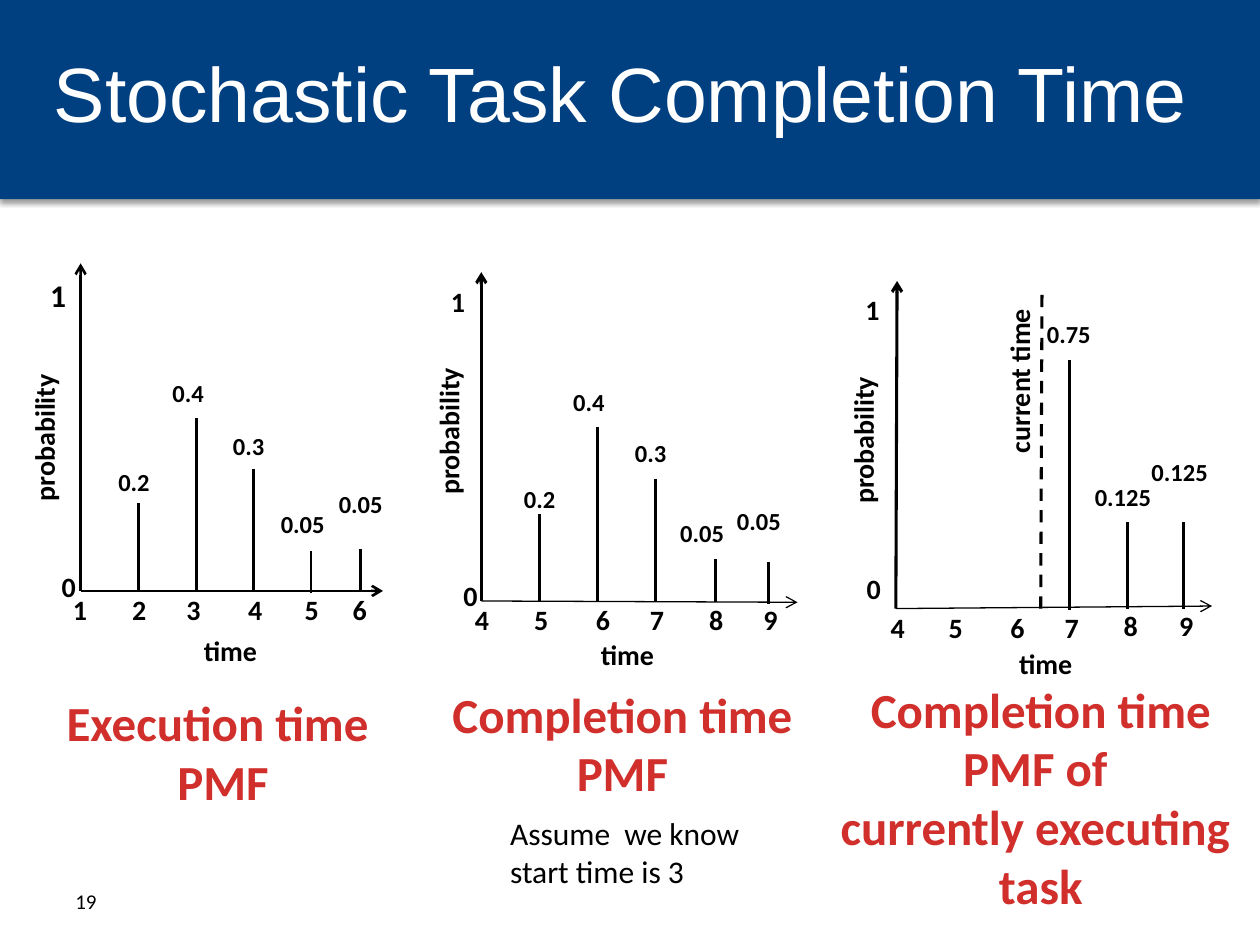
import dataclasses
import typing

import pptx
import pptx.dml.color
import pptx.enum.dml
import pptx.enum.shapes
import pptx.enum.text
import pptx.oxml
import pptx.oxml.ns
import pptx.util

BLACK, WHITE, NAVY, RED = "000000", "FFFFFF", "004080", "D02F2C"
Point = tuple[float, float]
LABEL_WIDTHS = {3: 0.45, 4: 0.55, 5: 0.65}  # by number of characters


@dataclasses.dataclass
class Stem:
    x: float
    bottom: float
    top: float
    label: str
    label_at: Point


@dataclasses.dataclass
class Plot:
    origin: Point
    time_end: Point
    probability_end: Point
    time_weight: float
    weight: float
    ticks: list[tuple[str, float, float]]
    stems: list[Stem]
    one_at: Point
    one_size: int
    zero_at: Point
    probability_at: Point
    time_at: Point
    caption: list[str]
    caption_box: tuple[float, float, float, float]


PLOTS = [
    Plot((0.64, 4.69), (3.04, 4.69), (0.64, 2.09), 1.5, 1.5,
         [("1", 0.48, 4.65), ("2", 0.95, 4.65), ("3", 1.38, 4.65),
          ("4", 1.87, 4.65), ("5", 2.32, 4.65), ("6", 2.7, 4.65)],
         [Stem(1.1, 4.7, 3.99, "0.2", (0.84, 3.66)),
          Stem(1.56, 4.7, 3.32, "0.4", (1.27, 2.95)),
          Stem(2.01, 4.69, 3.72, "0.3", (1.75, 3.37)),
          Stem(2.47, 4.71, 4.37, "0.05", (2.13, 3.99)),
          Stem(2.86, 4.7, 4.36, "0.05", (2.59, 3.83))],
         (0.3, 2.14), 18, (0.39, 4.47), (-0.26, 3.28), (1.52, 4.98),
         ["Execution time ", "PMF"], (0.41, 5.45, 2.72, 1.04)),
    Plot((3.82, 4.77), (6.33, 4.78), (3.82, 2.16), 0.75, 1.75,
         [("4", 3.67, 4.73), ("5", 4.14, 4.73), ("6", 4.63, 4.73),
          ("7", 5.06, 4.73), ("8", 5.53, 4.73), ("9", 5.96, 4.73)],
         [Stem(4.28, 4.78, 4.08, "0.2", (4.06, 3.79)),
          Stem(4.74, 4.77, 3.39, "0.4", (4.45, 3.02)),
          Stem(5.2, 4.77, 3.8, "0.3", (4.94, 3.43)),
          Stem(5.68, 4.78, 4.44, "0.05", (5.3, 4.06)),
          Stem(6.1, 4.79, 4.46, "0.05", (5.75, 3.97))],
         (3.48, 2.21), 16, (3.58, 4.54), (2.95, 3.23), (4.67, 5.01),
         ["Completion time", "PMF"], (3.47, 5.38, 2.94, 1.04)),
    Plot((7.11, 4.83), (9.62, 4.81), (7.12, 2.23), 0.75, 1.75,
         [("4", 6.97, 4.8), ("5", 7.43, 4.8), ("6", 7.92, 4.8),
          ("7", 8.35, 4.8), ("8", 8.82, 4.78), ("9", 9.26, 4.78)],
         [Stem(8.49, 4.84, 2.86, "0.75", (8.21, 2.48)),
          Stem(8.95, 4.83, 4.14, "0.125", (8.59, 3.78)),
          Stem(9.39, 4.83, 4.14, "0.125", (9.04, 3.58))],
         (6.77, 2.27), 16, (6.78, 4.49), (6.24, 3.3), (7.99, 5.08),
         ["Completion time", "PMF of ", "currently executing ", "task"],
         (6.55, 5.34, 3.42, 1.99)),
]


def length(inches: float) -> pptx.util.Length:
    return pptx.util.Cm(inches * 2.54)


def paint(target: typing.Any, color: str) -> None:
    """Give a fill one solid colour."""
    target.solid()
    target.fore_color.rgb = pptx.dml.color.RGBColor.from_string(color)


def add_effects(shape: typing.Any, content: str = "") -> None:
    """Replace the theme's effects by the given ones, or by none."""
    namespace = pptx.oxml.ns.nsdecls("a")
    shape._element.spPr.append(pptx.oxml.parse_xml(
        f"<a:effectLst {namespace}>{content}</a:effectLst>"))


def add_text(page: typing.Any, lines: list[str], left: float, top: float,
             width: float, height: float, size: float, color: str = BLACK,
             bold: bool = False, centered: bool = False, wrap: bool = False,
             font: str = "Calibri", rotation: float = 0) -> None:
    box = page.shapes.add_textbox(*map(length, (left, top, width, height)))
    box.rotation = rotation
    frame = box.text_frame
    frame.word_wrap = wrap
    if wrap:
        frame.auto_size = pptx.enum.text.MSO_AUTO_SIZE.NONE
        frame.vertical_anchor = pptx.enum.text.MSO_ANCHOR.MIDDLE
    else:
        frame.auto_size = pptx.enum.text.MSO_AUTO_SIZE.SHAPE_TO_FIT_TEXT
    para = frame.paragraphs[0]
    align = pptx.enum.text.PP_ALIGN
    para.alignment = align.CENTER if centered else align.LEFT
    for index, line in enumerate(lines):
        if index:
            para.add_line_break()
        span = para.add_run()
        span.text = line
        span.font.name = font
        span.font.size = pptx.util.Pt(size)
        span.font.bold = bold
        paint(span.font.fill, color)


def add_label(page: typing.Any, text: str, at: Point, width: float = 0.32,
              height: float = 0.37, size: float = 16, rotation: float = 0) -> None:
    add_text(page, [text], *at, width, height, size, bold=True, rotation=rotation)


def add_line(page: typing.Any, start: Point, end: Point, weight: float,
             arrow: bool = False, dashed: bool = False) -> None:
    line = page.shapes.add_connector(pptx.enum.shapes.MSO_CONNECTOR.STRAIGHT,
                                     *map(length, (*start, *end)))
    paint(line.line.fill, BLACK)
    line.line.width = pptx.util.Pt(weight)
    if dashed:
        line.line.dash_style = pptx.enum.dml.MSO_LINE.DASH
    if arrow:
        line.line._get_or_add_ln().append(pptx.oxml.parse_xml(
            f'<a:tailEnd {pptx.oxml.ns.nsdecls("a")} type="arrow"/>'))
    add_effects(line)


def draw_plot(page: typing.Any, plot: Plot) -> None:
    add_line(page, plot.origin, plot.time_end, plot.time_weight, arrow=True)
    add_line(page, plot.origin, plot.probability_end, plot.weight, arrow=True)
    for text, left, top in plot.ticks:
        add_label(page, text, (left, top))
    for stem in plot.stems:
        add_line(page, (stem.x, stem.bottom), (stem.x, stem.top), plot.weight)
        add_label(page, stem.label, stem.label_at,
                  LABEL_WIDTHS[len(stem.label)], 0.34, 14)
    add_label(page, "1", plot.one_at, size=plot.one_size)
    add_label(page, "0", plot.zero_at)
    add_label(page, "probability", plot.probability_at, 1.22, rotation=270)
    add_label(page, "time", plot.time_at, 0.63)
    add_text(page, plot.caption, *plot.caption_box, 28, RED, bold=True, centered=True)


def draw_banner(page: typing.Any) -> None:
    banner = page.shapes.add_shape(pptx.enum.shapes.MSO_SHAPE.RECTANGLE,
                                   *map(length, (0, 0, 10, 1.58)))
    paint(banner.fill, NAVY)
    banner.line.fill.background()
    add_effects(banner, '<a:outerShdw blurRad="39370" dist="20320" dir="5400000" '
                        'rotWithShape="0"><a:srgbClr val="000000">'
                        '<a:alpha val="38000"/></a:srgbClr></a:outerShdw>')
    add_text(page, ["Stochastic Task Completion Time"], 0.33, 0.33, 9.67, 0.8,
             44, WHITE, wrap=True, font="Arial")


def main() -> None:
    deck = pptx.Presentation()
    deck.slide_width, deck.slide_height = length(10), length(7.5)
    page = deck.slides.add_slide(deck.slide_layouts[6])
    draw_banner(page)
    for plot in PLOTS:
        draw_plot(page, plot)
    add_line(page, (8.26, 4.83), (8.27, 2.33), 1.75, dashed=True)
    add_label(page, "current time", (7.41, 2.83), 1.36, rotation=270)
    add_text(page, ["Assume  we know ", "start time is 3"], 3.95, 6.41, 2.1, 0.71, 18)
    add_text(page, ["19"], 0.5, 6.95, 2.33, 0.4, 12, wrap=True)
    deck.save("out.pptx")


if __name__ == "__main__":
    main()
